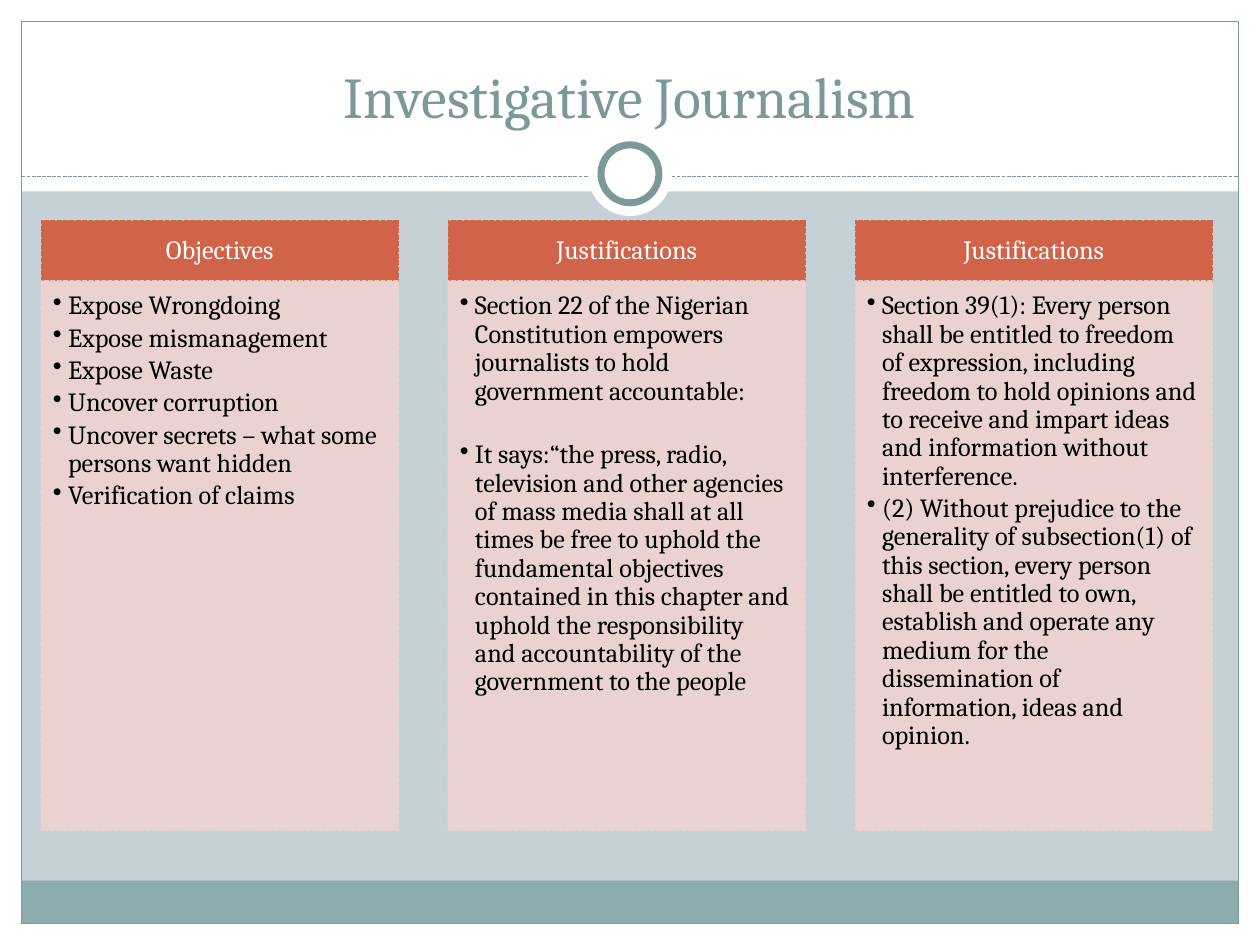
from lxml.etree import SubElement
from pptx import Presentation
from pptx.dml.color import RGBColor
from pptx.enum.dml import MSO_LINE
from pptx.enum.shapes import MSO_CONNECTOR as Link, MSO_SHAPE as Form
from pptx.enum.text import MSO_ANCHOR as Anchor, PP_ALIGN as Align
from pptx.oxml.ns import qn
from pptx.util import Inches, Pt

WHITE = RGBColor(0xFF, 0xFF, 0xFF)
BLACK = RGBColor(0, 0, 0)
MIST = RGBColor(0xC5, 0xD1, 0xD7)
TEAL = RGBColor(0x8C, 0xAD, 0xAE)
SLATE = RGBColor(0x7C, 0x99, 0x9A)
RUST = RGBColor(0xD1, 0x63, 0x49)
ROSE = RGBColor(0xEE, 0xD3, 0xD0)
FONT = "Cambria"

TITLE = "Investigative Journalism"
COLUMNS = [
    ("Objectives", [
        "Expose Wrongdoing",
        "Expose mismanagement",
        "Expose Waste",
        "Uncover corruption",
        "Uncover secrets – what some persons want hidden",
        "Verification of claims",
    ], 0),
    ("Justifications", [
        "Section 22 of the Nigerian Constitution empowers journalists to hold "
        "government accountable:",
        "It says:“the press, radio, television and other agencies of mass media "
        "shall at all times be free to uphold the fundamental objectives contained "
        "in this chapter and uphold the responsibility and accountability of the "
        "government to the people",
    ], 18),
    ("Justifications", [
        "Section 39(1): Every person shall be entitled to freedom of expression, "
        "including freedom to hold opinions and to receive and impart ideas and "
        "information without interference.",
        "(2) Without prejudice to the generality of subsection(1) of this section, "
        "every person shall be entitled to own, establish and operate any medium "
        "for the dissemination of information, ideas and opinion.",
    ], 0),
]

WIDE, HIGH, EDGE = 10, 7.5, 0.17
LEFT, TOP, COL, PITCH = 0.33, 1.75, 2.83, 3.23
HEAD, BODY = 0.48, 4.36
RULE = 1.4


def add_box(slide, area, fill=None, line=None, width=0.75, form=Form.RECTANGLE):
    """Add a plain shape with an optional fill and outline."""
    box = slide.shapes.add_shape(form, *map(Inches, area))
    box.shadow.inherit = False
    if fill is None:
        box.fill.background()
    else:
        box.fill.solid()
        box.fill.fore_color.rgb = fill
    if line is None:
        box.line.fill.background()
    else:
        box.line.color.rgb = line
        box.line.width = Pt(width)
    return box


def add_ring(slide, size, line=None):
    """Add a white circle at the middle of the rule."""
    mid = RULE - 0.02
    area = ((WIDE - size) / 2, mid - size / 2, size, size)
    add_box(slide, area, WHITE, line, 4, Form.OVAL)


def set_text(shape, lines, size, color, align, anchor, insets):
    """Write and format the paragraphs of a shape."""
    frame = shape.text_frame
    frame.word_wrap = True
    frame.vertical_anchor = anchor
    (frame.margin_left, frame.margin_top,
     frame.margin_right, frame.margin_bottom) = map(Inches, insets)
    frame.text = "\n".join(lines)
    for para in frame.paragraphs:
        para.alignment = align
        font = para.runs[0].font
        font.name, font.size, font.color.rgb = FONT, Pt(size), color
    return frame.paragraphs


def add_bullet(para):
    """Give a paragraph a hanging round bullet."""
    props = para._p.get_or_add_pPr()
    props.set("marL", str(Inches(0.12)))
    props.set("indent", str(-Inches(0.12)))
    SubElement(props, qn("a:buChar")).set("char", "•")


def add_column(slide, left, head, items, gap):
    """Add a header and the bulleted panel below it."""
    cap = add_box(slide, (left, TOP, COL, HEAD), RUST, RUST, 0.9)
    panel = add_box(slide, (left, TOP + HEAD, COL, BODY), ROSE, ROSE, 0.9)
    for box in (cap, panel):
        box.line.dash_style = MSO_LINE.SQUARE_DOT
    for color in panel.element.spPr.iter(qn("a:srgbClr")):
        SubElement(color, qn("a:alpha")).set("val", "90000")
    label = set_text(cap, [head], 15, WHITE, Align.CENTER, Anchor.MIDDLE,
                     (0.12, 0.07, 0.12, 0.07))
    label[0].line_spacing = 0.9
    paras = set_text(panel, items, 15, BLACK, Align.LEFT, Anchor.TOP,
                     (0.09, 0.09, 0.12, 0.13))
    for spot, para in enumerate(paras):
        para.line_spacing = 0.9
        para.space_before = Pt(gap if spot else 0)
        para.space_after = Pt(2.25)
        add_bullet(para)


def add_frame(slide):
    """Add the white margins, footer band, outline, rule and rings."""
    inner = WIDE - 2 * EDGE
    for area in [(0, HIGH - EDGE, WIDE, EDGE), (0, 0, WIDE, 1.52),
                 (0, 0, EDGE, HIGH), (WIDE - EDGE, 0, EDGE, HIGH)]:
        add_box(slide, area, WHITE)
    add_box(slide, (EDGE, 6.99, inner, 0.34), TEAL)
    add_box(slide, (EDGE, EDGE, inner, HIGH - 2 * EDGE), None, SLATE)
    ends = map(Inches, (EDGE, RULE, WIDE - EDGE, RULE))
    rule = slide.shapes.add_connector(Link.STRAIGHT, *ends)
    rule.line.color.rgb = SLATE
    rule.line.width = Pt(0.75)
    rule.line.dash_style = MSO_LINE.SQUARE_DOT
    SubElement(rule.element.spPr, qn("a:effectLst"))
    add_ring(slide, 0.67)
    add_ring(slide, 0.46, SLATE)


def main():
    """Build and save the slide."""
    deck = Presentation()
    deck.slide_width, deck.slide_height = Inches(WIDE), Inches(HIGH)
    slide = deck.slides.add_slide(deck.slide_layouts[5])
    slide.background.fill.solid()
    slide.background.fill.fore_color.rgb = MIST
    add_frame(slide)
    title = slide.shapes.title
    title.left, title.top = Inches(LEFT), Inches(0.25)
    title.width, title.height = Inches(WIDE - 2 * LEFT), Inches(0.83)
    set_text(title, [TITLE], 33, SLATE, Align.CENTER, Anchor.BOTTOM,
             (0.1, 0.05, 0.1, 0.05))
    title.element.getparent().append(title.element)
    for spot, (head, items, gap) in enumerate(COLUMNS):
        add_column(slide, LEFT + spot * PITCH, head, items, gap)
    deck.save("out.pptx")


if __name__ == "__main__":
    main()
